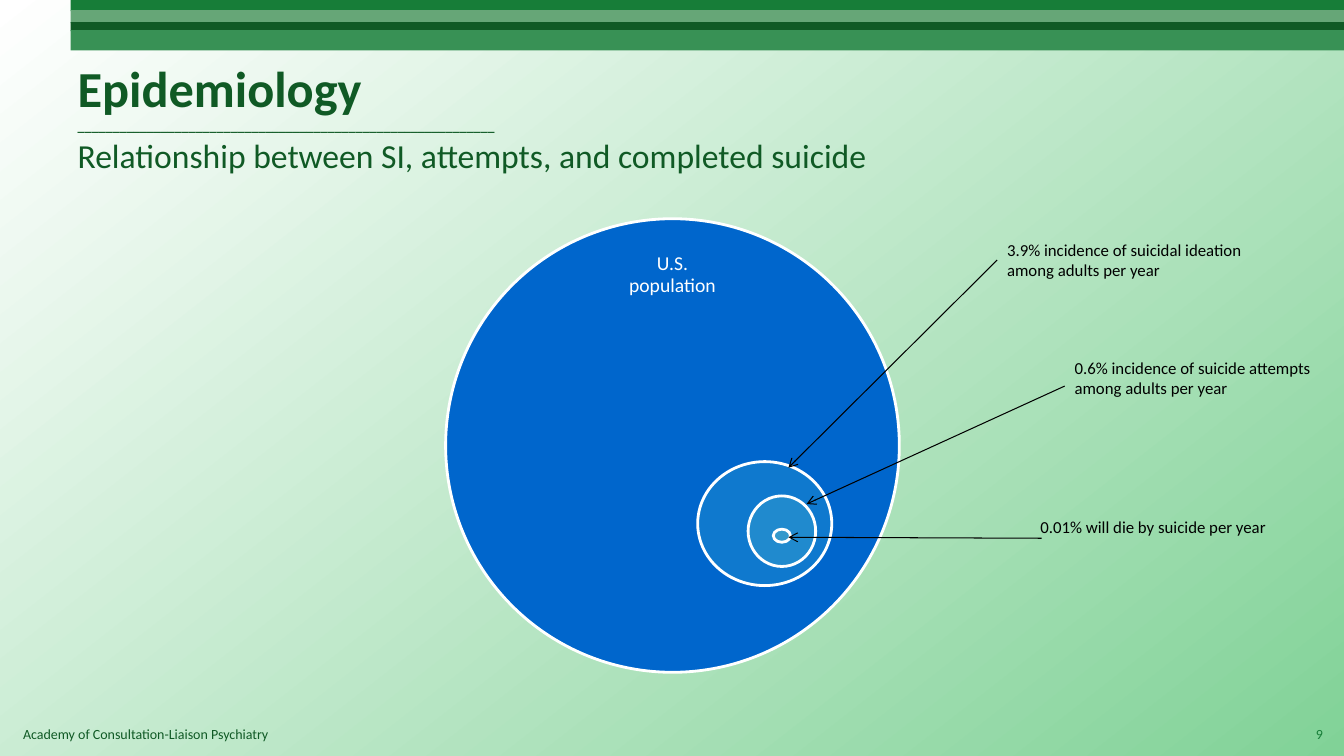
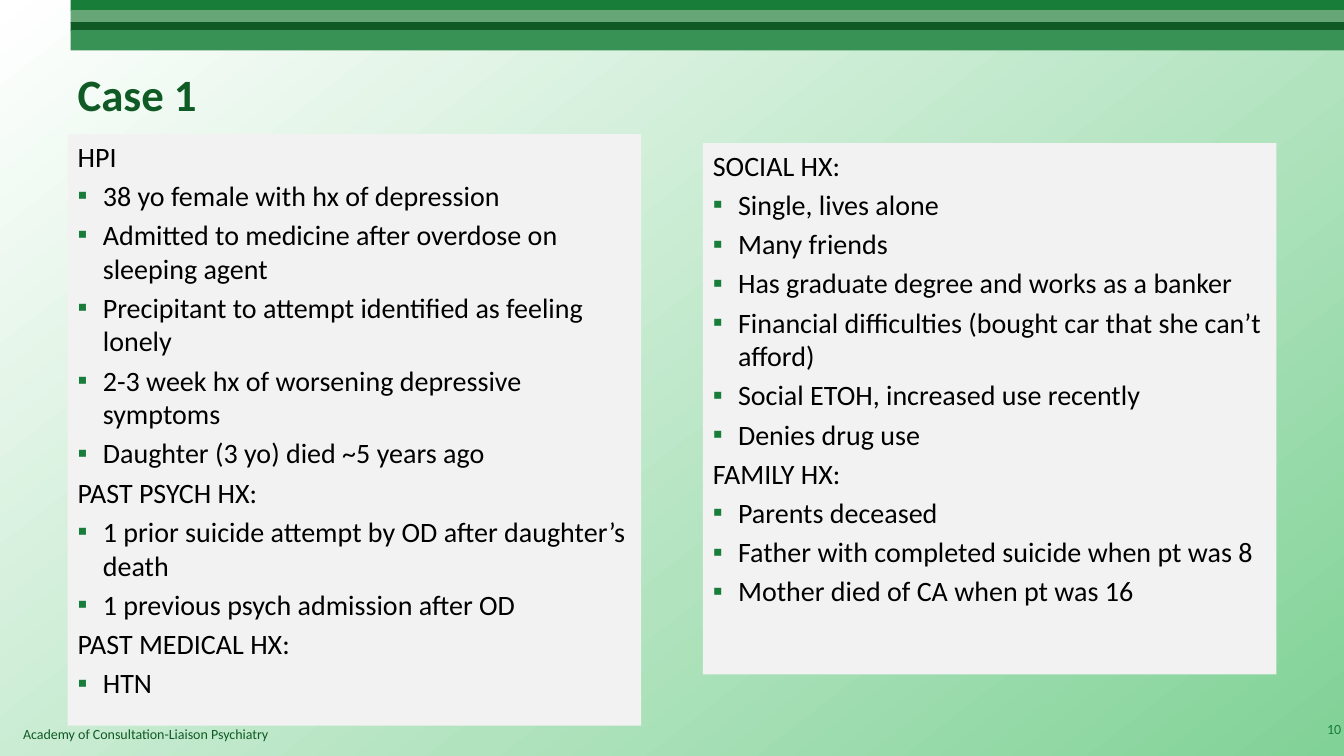
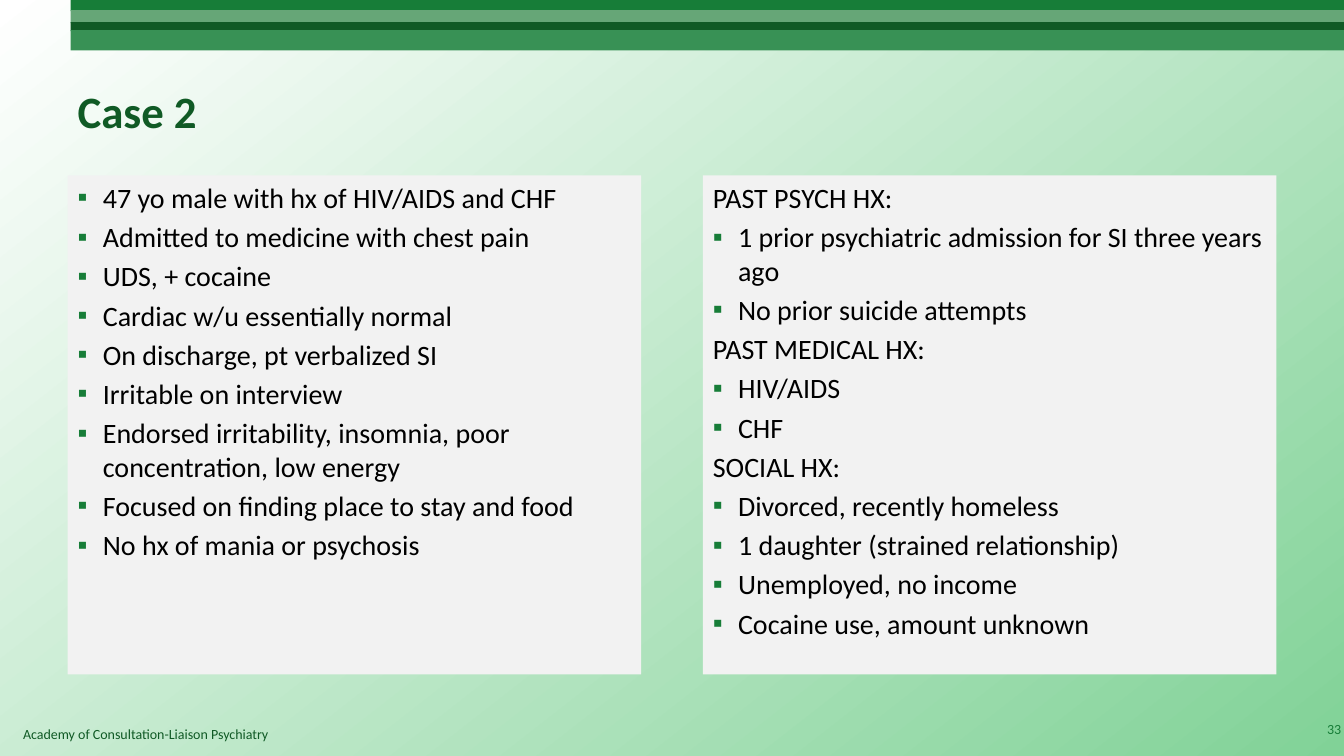
"""Build three slides on suicide epidemiology and two patient cases."""
from lxml.etree import SubElement
from pptx import Presentation
from pptx.dml.color import RGBColor
from pptx.enum.shapes import MSO_CONNECTOR, MSO_SHAPE
from pptx.enum.text import MSO_ANCHOR, MSO_AUTO_SIZE, PP_ALIGN
from pptx.oxml.ns import qn
from pptx.util import Inches, Pt

DARK_GREEN = RGBColor(0x10, 0x5A, 0x25)
GREEN = RGBColor(0x17, 0x7D, 0x38)
MID_GREEN = RGBColor(0x38, 0x91, 0x55)
SOFT_GREEN = RGBColor(0x66, 0xA6, 0x77)
PALE_GREEN = RGBColor(0x81, 0xD2, 0x97)
PANEL_GRAY = RGBColor(0xF2, 0xF2, 0xF2)
WHITE = RGBColor(0xFF, 0xFF, 0xFF)
BLACK = RGBColor(0x00, 0x00, 0x00)
FONT = "Calibri"
TITLE_ONLY, TWO_CONTENT = 5, 3


def style_paragraph(paragraph, size, color, bold=False, alignment=PP_ALIGN.LEFT):
    paragraph.alignment = alignment
    paragraph.font.name = FONT
    paragraph.font.size = Pt(size)
    paragraph.font.bold = bold
    paragraph.font.color.rgb = color


def add_text(slide, box, text, size, color, alignment=PP_ALIGN.LEFT, anchor=MSO_ANCHOR.TOP):
    shape = slide.shapes.add_textbox(*map(Inches, box))
    shape.text_frame.word_wrap = True
    shape.text_frame.vertical_anchor = anchor
    shape.text_frame.text = text
    style_paragraph(shape.text_frame.paragraphs[0], size, color, alignment=alignment)
    return shape


presentation = Presentation()
presentation.slide_width = Inches(13.33)
presentation.slide_height = Inches(7.5)
master = presentation.slide_master

background = master.background.fill
background.gradient()
background.gradient_angle = 308
for stop, color in zip(background.gradient_stops, (WHITE, PALE_GREEN)):
    stop.color.rgb = color

headers = [
    (TITLE_ONLY, 0.3, 1.7,
     [("Epidemiology", 36, True), ("_" * 60, 10, True),
      ("Relationship between SI, attempts, and completed suicide", 24, False)],
     "9", (12.69, 7.08)),
    (TWO_CONTENT, 0.3, 1.25, [("Case 1", 32, True)], "10", (12.87, 7.03)),
    (TWO_CONTENT, 0.47, 1.25, [("Case 2", 32, True)], "33", (12.87, 7.03)),
]
for layout, top, height, lines, number, corner in headers:
    slide = presentation.slides.add_slide(presentation.slide_layouts[layout])
    title = slide.shapes.title
    title.left, title.top, title.width, title.height = map(Inches, (0.67, top, 12, height))
    frame = title.text_frame
    frame.text = "\n".join(text for text, size, bold in lines)
    frame.auto_size = MSO_AUTO_SIZE.NONE
    frame.vertical_anchor = MSO_ANCHOR.MIDDLE
    for paragraph, (text, size, bold) in zip(frame.paragraphs, lines):
        style_paragraph(paragraph, size, DARK_GREEN, bold)
    add_text(slide, (*corner, 0.53, 0.4), number, 10, GREEN, PP_ALIGN.RIGHT, MSO_ANCHOR.MIDDLE)

epidemiology, *case_slides = presentation.slides

master_shapes = []
bands = [(0, 0.11, GREEN), (0.1, 0.13, SOFT_GREEN), (0.22, 0.09, DARK_GREEN), (0.3, 0.2, MID_GREEN)]
for top, height, color in bands:
    band = epidemiology.shapes.add_shape(
        MSO_SHAPE.RECTANGLE, Inches(0.7), Inches(top), Inches(12.63), Inches(height))
    band.shadow.inherit = False
    band.fill.solid()
    band.fill.fore_color.rgb = color
    band.line.fill.background()
    master_shapes.append(band)
master_shapes.append(add_text(epidemiology, (0.13, 7.15, 9.25, 0.27),
                              "Academy of Consultation-Liaison Psychiatry", 10, DARK_GREEN))
for shape_id, shape in enumerate(master_shapes, start=20):
    shape.element.nvSpPr.cNvPr.set("id", str(shape_id))
    master.shapes.element.append(shape.element)

circles = [
    (4.42, 2.17, 4.5, 4.5, RGBColor(0x00, 0x66, 0xCC)),
    (6.92, 4.58, 1.33, 1.23, RGBColor(0x0F, 0x79, 0xCE)),
    (7.42, 4.92, 0.67, 0.7, RGBColor(0x20, 0x8A, 0xCE)),
    (7.67, 5.25, 0.17, 0.13, RGBColor(0x33, 0x99, 0xCC)),
]
for *box, color in circles:
    circle = epidemiology.shapes.add_shape(MSO_SHAPE.OVAL, *map(Inches, box))
    circle.shadow.inherit = False
    circle.fill.solid()
    circle.fill.fore_color.rgb = color
    circle.line.color.rgb = WHITE
    circle.line.width = Pt(2)

population = add_text(epidemiology, (6.04, 2.39, 1.26, 0.68), "U.S. population", 14, WHITE,
                      PP_ALIGN.CENTER, MSO_ANCHOR.MIDDLE)
population.text_frame.margin_left = population.text_frame.margin_right = Inches(0.11)
population.text_frame.paragraphs[0].line_spacing = 0.9

callouts = [
    ("3.9% incidence of suicidal ideation among adults per year",
     (9.89, 2.33, 2.67, 0.5), (9.89, 2.58, 7.82, 4.64)),
    ("0.6% incidence of suicide attempts among adults per year",
     (10.56, 3.5, 2.77, 0.5), (10.56, 3.83, 8, 5)),
    ("0.01% will die by suicide per year",
     (10.22, 5.08, 2.67, 0.3), (10.33, 5.34, 7.82, 5.33)),
]
for text, box, ends in callouts:
    arrow = epidemiology.shapes.add_connector(MSO_CONNECTOR.STRAIGHT, *map(Inches, ends))
    arrow.line.color.rgb = BLACK
    arrow.line.width = Pt(0.75)
    properties = arrow.element.spPr
    SubElement(properties.find(qn("a:ln")), qn("a:tailEnd"), type="arrow")
    SubElement(properties, qn("a:effectLst"))
    add_text(epidemiology, box, text, 12, BLACK)

case_panels = [
    [
        (1.33, 5.87, [
            ("HPI", [
                "38 yo female with hx of depression",
                "Admitted to medicine after overdose on sleeping agent",
                "Precipitant to attempt identified as feeling lonely",
                "2-3 week hx of worsening depressive symptoms",
                "Daughter (3 yo) died ~5 years ago"]),
            ("PAST PSYCH HX:", [
                "1 prior suicide attempt by OD after daughter’s death",
                "1 previous psych admission after OD"]),
            ("PAST MEDICAL HX:", ["HTN"]),
        ]),
        (1.42, 5.27, [
            ("SOCIAL HX:", [
                "Single, lives alone",
                "Many friends",
                "Has graduate degree and works as a banker",
                "Financial difficulties (bought car that she can’t afford)",
                "Social ETOH, increased use recently",
                "Denies drug use"]),
            ("FAMILY HX:", [
                "Parents deceased",
                "Father with completed suicide when pt was 8",
                "Mother died of CA when pt was 16"]),
        ]),
    ],
    [
        (1.74, 4.95, [
            (None, [
                "47 yo male with hx of HIV/AIDS and CHF",
                "Admitted to medicine with chest pain",
                "UDS, + cocaine",
                "Cardiac w/u essentially normal",
                "On discharge, pt verbalized SI",
                "Irritable on interview",
                "Endorsed irritability, insomnia, poor concentration, low energy",
                "Focused on finding place to stay and food",
                "No hx of mania or psychosis"]),
        ]),
        (1.74, 4.95, [
            ("PAST PSYCH HX:", [
                "1 prior psychiatric admission for SI three years ago",
                "No prior suicide attempts"]),
            ("PAST MEDICAL HX:", ["HIV/AIDS", "CHF"]),
            ("SOCIAL HX:", [
                "Divorced, recently homeless",
                "1 daughter (strained relationship)",
                "Unemployed, no income",
                "Cocaine use, amount unknown"]),
        ]),
    ],
]
for slide, panels in zip(case_slides, case_panels):
    for index, left, (top, height, sections) in zip((1, 2), (0.67, 6.97), panels):
        panel = slide.placeholders[index]
        panel.left, panel.top, panel.width, panel.height = map(Inches, (left, top, 5.69, height))
        panel.fill.solid()
        panel.fill.fore_color.rgb = PANEL_GRAY
        entries = []
        for heading, items in sections:
            if heading:
                entries.append((heading, False))
            entries.extend((item, True) for item in items)
        frame = panel.text_frame
        frame.text = "\n".join(text for text, bulleted in entries)
        frame.auto_size = MSO_AUTO_SIZE.NONE
        for paragraph, (text, bulleted) in zip(frame.paragraphs, entries):
            properties = paragraph._p.get_or_add_pPr()
            properties.set("marL", str(Inches(0.25)))
            properties.set("indent", str(Inches(-0.25)))
            if bulleted:
                bullet_color = SubElement(properties, qn("a:buClr"))
                SubElement(bullet_color, qn("a:srgbClr"), val=str(GREEN))
                SubElement(properties, qn("a:buChar"), char="▪")
            else:
                SubElement(properties, qn("a:buNone"))
            style_paragraph(paragraph, 20, BLACK)
        frame.paragraphs[0].space_before = Pt(0)

presentation.save("out.pptx")
